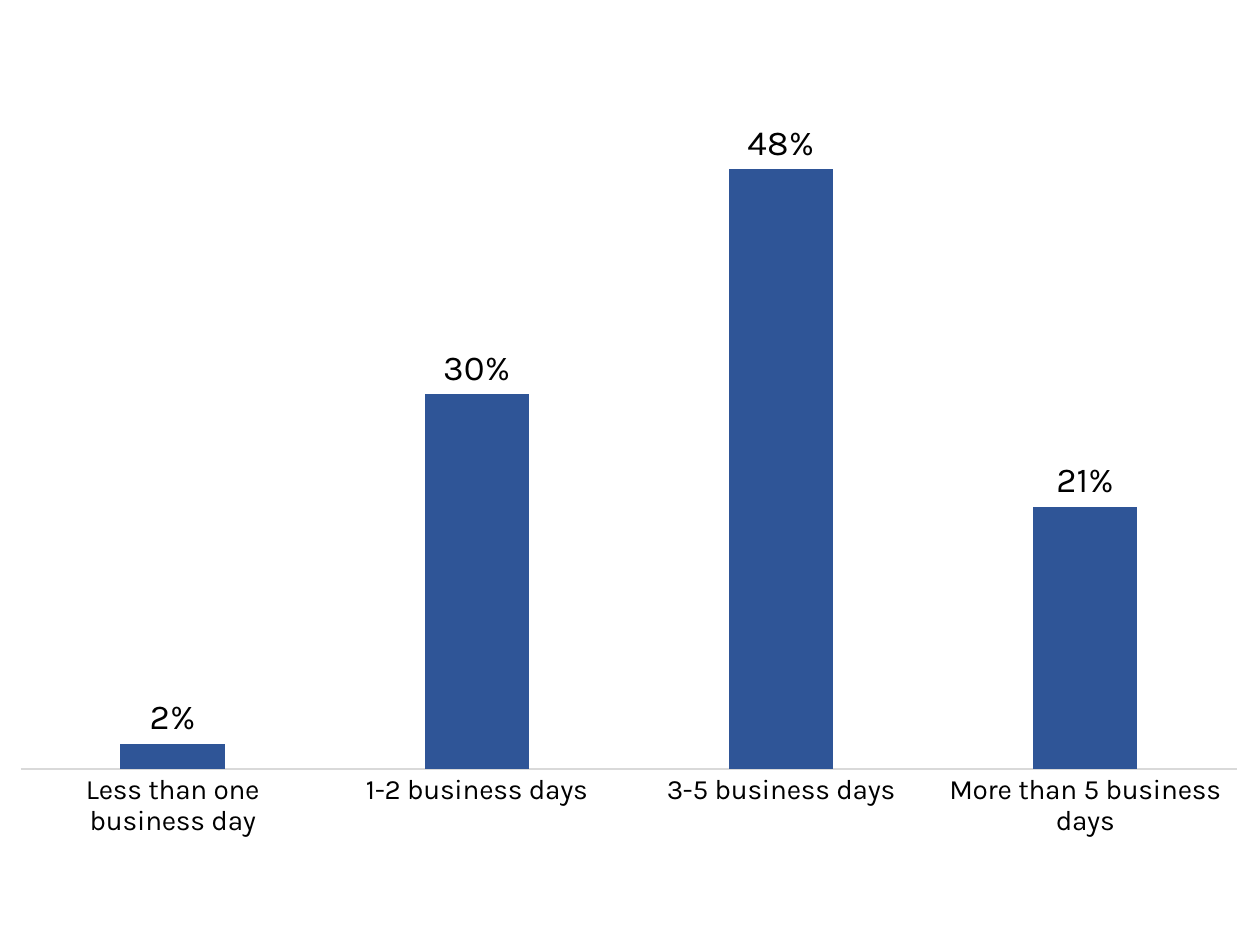
import dataclasses

import lxml.etree
import pptx
import pptx.chart.data
import pptx.dml.color
import pptx.enum.chart
import pptx.oxml.ns
import pptx.util

PX = 914400 / 126


@dataclasses.dataclass(frozen=True)
class Theme:
    font: str = "Karla"
    text: str = "000000"
    bar: str = "2F5597"
    axis: str = "D9D9D9"
    base_size: int = 10
    category_size: int = 16
    label_size: int = 20


THEME = Theme()
RESPONSE_TIMES = {
    "Less than one business day": 0.02,
    "1-2 business days": 0.30,
    "3-5 business days": 0.48,
    "More than 5 business days": 0.21,
}


def px(n):
    """Turn whole pixels into EMU."""
    return pptx.util.Emu(round(n * PX))


def rgb(value):
    """Turn a hex string into a colour."""
    return pptx.dml.color.RGBColor.from_string(value)


def style_font(font, size):
    """Set the theme font at a given size."""
    font.name = THEME.font
    font.size = pptx.util.Pt(size)
    font.color.rgb = rgb(THEME.text)


def set_plot_layout(chart, x, y, w, h):
    """Place the inner plot area by fractions of the chart."""
    qn = pptx.oxml.ns.qn
    plot_area = chart._chartSpace.find(".//" + qn("c:plotArea"))
    for old in plot_area.findall(qn("c:layout")):
        plot_area.remove(old)
    layout = lxml.etree.Element(qn("c:layout"))
    manual = lxml.etree.SubElement(layout, qn("c:manualLayout"))
    settings = {"layoutTarget": "inner", "xMode": "edge", "yMode": "edge",
                "x": x, "y": y, "w": w, "h": h}
    for tag, value in settings.items():
        lxml.etree.SubElement(manual, qn("c:" + tag)).set("val", str(value))
    plot_area.insert(0, layout)


def style_axes(chart):
    """Show only the category axis with its thin line."""
    tick = pptx.enum.chart.XL_TICK_MARK
    axis = chart.category_axis
    axis.major_tick_mark = axis.minor_tick_mark = tick.NONE
    axis.format.line.color.rgb = rgb(THEME.axis)
    axis.format.line.width = pptx.util.Pt(0.75)
    style_font(axis.tick_labels.font, THEME.category_size)
    values = chart.value_axis
    values.minimum_scale = 0
    values.maximum_scale = 0.5
    values.has_major_gridlines = False
    values.visible = False


def style_bars(chart):
    """Colour the bars and label each above its top."""
    plot = chart.plots[0]
    plot.gap_width = 191
    plot.overlap = -27
    plot.vary_by_categories = False
    series = plot.series[0]
    series.format.fill.solid()
    series.format.fill.fore_color.rgb = rgb(THEME.bar)
    labels = series.data_labels
    labels.show_value = True
    labels.number_format = "0%"
    labels.number_format_is_linked = False
    labels.position = pptx.enum.chart.XL_LABEL_POSITION.OUTSIDE_END
    style_font(labels.font, THEME.label_size)


def add_column_chart(s, values, x, y, w, h):
    """Add a column chart of shares by category."""
    data = pptx.chart.data.CategoryChartData(number_format="0%")
    data.categories = list(values)
    data.add_series("Series 1", list(values.values()))
    kind = pptx.enum.chart.XL_CHART_TYPE.COLUMN_CLUSTERED
    chart = s.shapes.add_chart(kind, px(x), px(y), px(w), px(h), data).chart
    chart.has_title = False
    chart.has_legend = False
    style_font(chart.font, THEME.base_size)
    style_axes(chart)
    style_bars(chart)
    return chart


def main():
    """Build the slide and save it."""
    prs = pptx.Presentation()
    prs.slide_width, prs.slide_height = px(1260), px(945)
    s = prs.slides.add_slide(prs.slide_layouts[6])
    chart = add_column_chart(s, RESPONSE_TIMES, 20, 82, 1218, 781)
    set_plot_layout(chart, 0, 0.08, 1, 0.8)
    prs.save("out.pptx")


if __name__ == "__main__":
    main()
